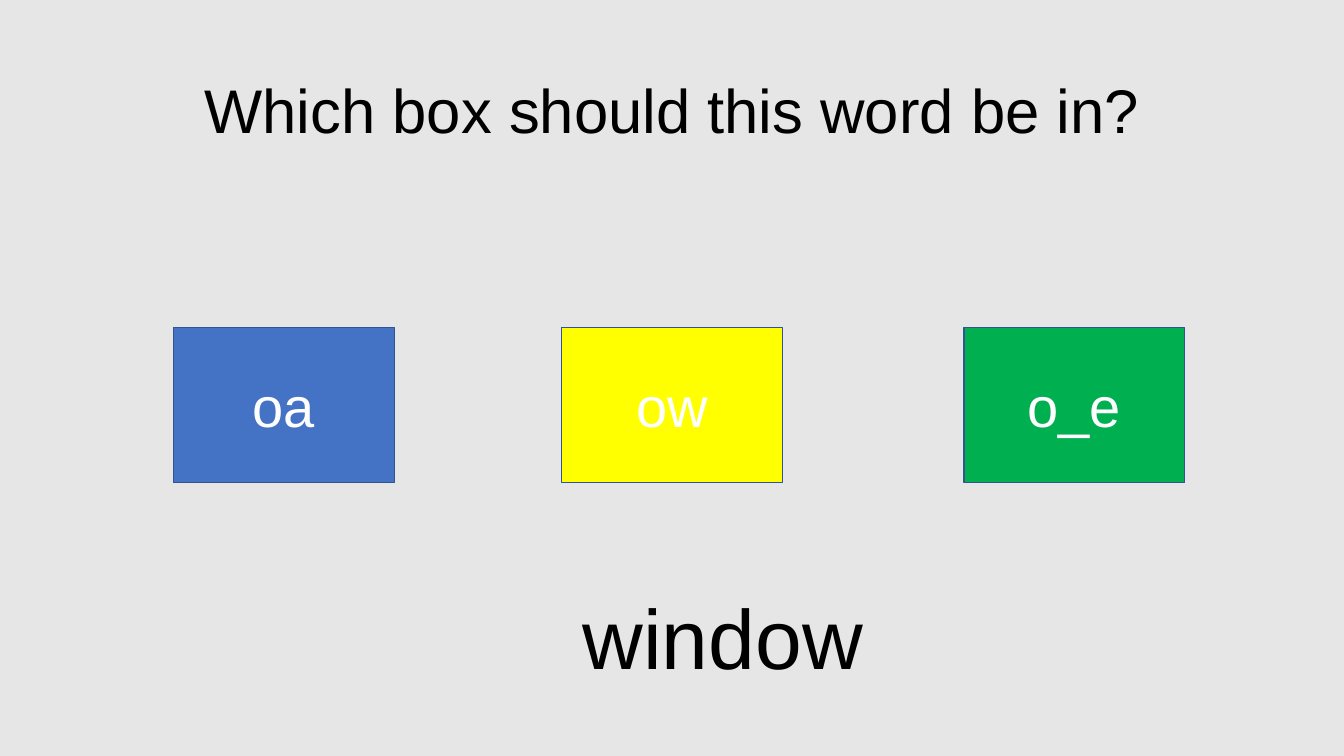
from pptx import Presentation
from pptx.dml.color import RGBColor
from pptx.enum.shapes import MSO_SHAPE
from pptx.enum.text import MSO_ANCHOR, PP_ALIGN
from pptx.util import Inches, Pt

GREY = RGBColor(0xE7, 0xE6, 0xE6)
BLACK = RGBColor(0, 0, 0)
WHITE = RGBColor(0xFF, 0xFF, 0xFF)
BLUE = RGBColor(0x44, 0x72, 0xC4)
YELLOW = RGBColor(0xFF, 0xFF, 0)
GREEN = RGBColor(0, 0xB0, 0x50)
NAVY = RGBColor(0x32, 0x54, 0x91)

BOXES = [("oa", 1.72, BLUE), ("ow", 5.57, YELLOW), ("o_e", 9.56, GREEN)]


def set_all(target, values):
    """Set each named attribute of the target."""
    for name, value in values.items():
        setattr(target, name, value)


def write(shape, text, size, color, align=PP_ALIGN.CENTER,
          anchor=MSO_ANCHOR.MIDDLE, spacing=1.0):
    """Put one formatted line of text in a shape."""
    frame = shape.text_frame
    set_all(frame, {"word_wrap": True, "vertical_anchor": anchor})
    line = frame.paragraphs[0]
    set_all(line, {"alignment": align, "line_spacing": spacing})
    run = line.add_run()
    run.text = text
    set_all(run.font, {"name": "Arial", "size": Pt(size)})
    run.font.color.rgb = color


def add_label(slide, area, text, size, **layout):
    """Add black text in an area given in inches."""
    label = slide.shapes.add_textbox(*map(Inches, area))
    write(label, text, size, BLACK, **layout)


def add_box(slide, text, left, color):
    """Add a coloured sound box."""
    area = map(Inches, (left, 3.25, 2.19, 1.54))
    box = slide.shapes.add_shape(MSO_SHAPE.RECTANGLE, *area)
    box.shadow.inherit = False
    box.fill.solid()
    box.fill.fore_color.rgb = color
    box.line.color.rgb = NAVY
    box.line.width = Pt(1)
    write(box, text, 40, WHITE)


def main():
    """Build and save the spelling slide."""
    deck = Presentation()
    set_all(deck, {"slide_width": Inches(13.33), "slide_height": Inches(7.5)})
    slide = deck.slides.add_slide(deck.slide_layouts[6])
    slide.background.fill.solid()
    slide.background.fill.fore_color.rgb = GREY

    add_label(slide, (0.92, 0.4, 11.5, 1.45),
              "Which box should this word be in?", 44, spacing=0.9)
    for text, left, color in BOXES:
        add_box(slide, text, left, color)
    add_label(slide, (5.68, 5.76, 3.2, 1.11), "window", 60,
              align=PP_ALIGN.LEFT, anchor=MSO_ANCHOR.TOP)

    deck.save("out.pptx")


if __name__ == "__main__":
    main()
